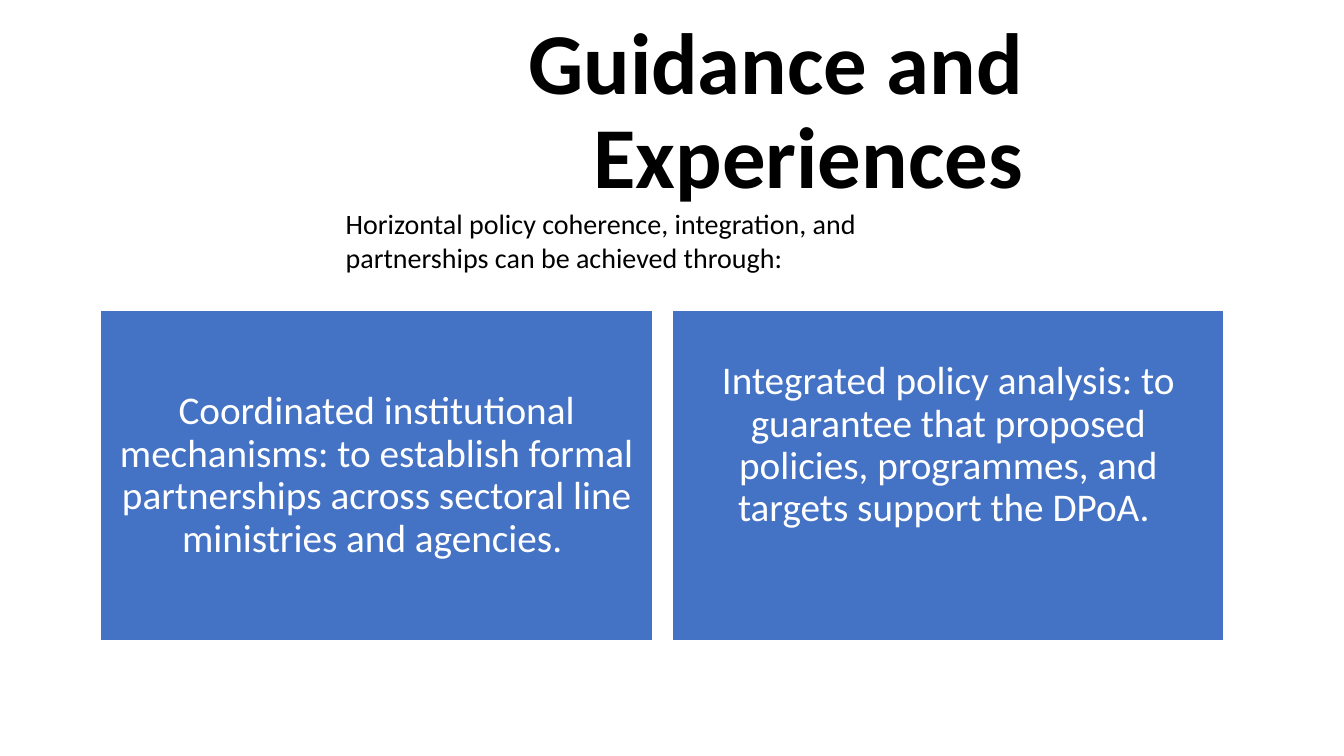
from pptx import Presentation
from pptx.dml.color import RGBColor
from pptx.enum import shapes, text
from pptx.util import Inches, Pt


def color(value):
    return RGBColor.from_string(value)


class SlideBuilder:
    FONT = "Calibri"
    BLACK, WHITE, BLUE = "000000", "FFFFFF", "4472C4"

    def __init__(self, presentation):
        self.slide = presentation.slides.add_slide(presentation.slide_layouts[6])
        background = self.slide.background.fill
        background.solid()
        background.fore_color.rgb = color(self.WHITE)

    def set_text(self, shape, wording, size, font_color, bold=False,
                 align=text.PP_ALIGN.LEFT, anchor=text.MSO_ANCHOR.TOP, spacing=1.0):
        frame = shape.text_frame
        frame.text = wording
        frame.word_wrap = True
        frame.vertical_anchor = anchor
        paragraph = frame.paragraphs[0]
        paragraph.alignment = align
        paragraph.line_spacing = spacing
        font = paragraph.runs[0].font
        font.name, font.size, font.bold = self.FONT, Pt(size), bold
        font.color.rgb = color(font_color)

    def label(self, left, top, width, height, wording, size, **style):
        box = self.slide.shapes.add_textbox(
            Inches(left), Inches(top), Inches(width), Inches(height))
        self.set_text(box, wording, size, self.BLACK, **style)

    def card(self, left, top, width, height, wording, lift=0):
        """Draw a filled box; lift is extra bottom inset that raises its text."""
        card = self.slide.shapes.add_shape(
            shapes.MSO_SHAPE.RECTANGLE,
            Inches(left), Inches(top), Inches(width), Inches(height))
        card.shadow.inherit = False
        card.fill.solid()
        card.fill.fore_color.rgb = color(self.BLUE)
        card.line.color.rgb = color(self.WHITE)
        card.line.width = Pt(1)
        frame = card.text_frame
        frame.margin_left = frame.margin_right = frame.margin_top = Inches(0.12)
        frame.margin_bottom = Inches(0.12 + lift)
        self.set_text(card, wording, 28, self.WHITE, align=text.PP_ALIGN.CENTER,
                      anchor=text.MSO_ANCHOR.MIDDLE, spacing=0.9)


def main():
    presentation = Presentation()
    presentation.slide_width, presentation.slide_height = Inches(13.33), Inches(7.5)
    builder = SlideBuilder(presentation)

    builder.label(0.92, 0.4, 9.33, 1.45, "Guidance and Experiences", 62, bold=True,
                  align=text.PP_ALIGN.RIGHT, anchor=text.MSO_ANCHOR.MIDDLE, spacing=0.9)

    approaches = [
        ("Coordinated institutional mechanisms: to establish formal partnerships "
         "across sectoral line ministries and agencies. ", 0),
        ("Integrated policy analysis: to guarantee that proposed policies, "
         "programmes, and targets support the DPoA. ", 0.6),
    ]
    card_width, gap = 5.47, 0.2
    for index, (wording, lift) in enumerate(approaches):
        builder.card(1 + index * (card_width + gap), 3.08, card_width, 3.28, wording, lift)

    builder.label(3.33, 2, 6.67, 0.77, "Horizontal policy coherence, integration, and "
                  "partnerships can be achieved through:", 20)
    presentation.save("out.pptx")


if __name__ == "__main__":
    main()
